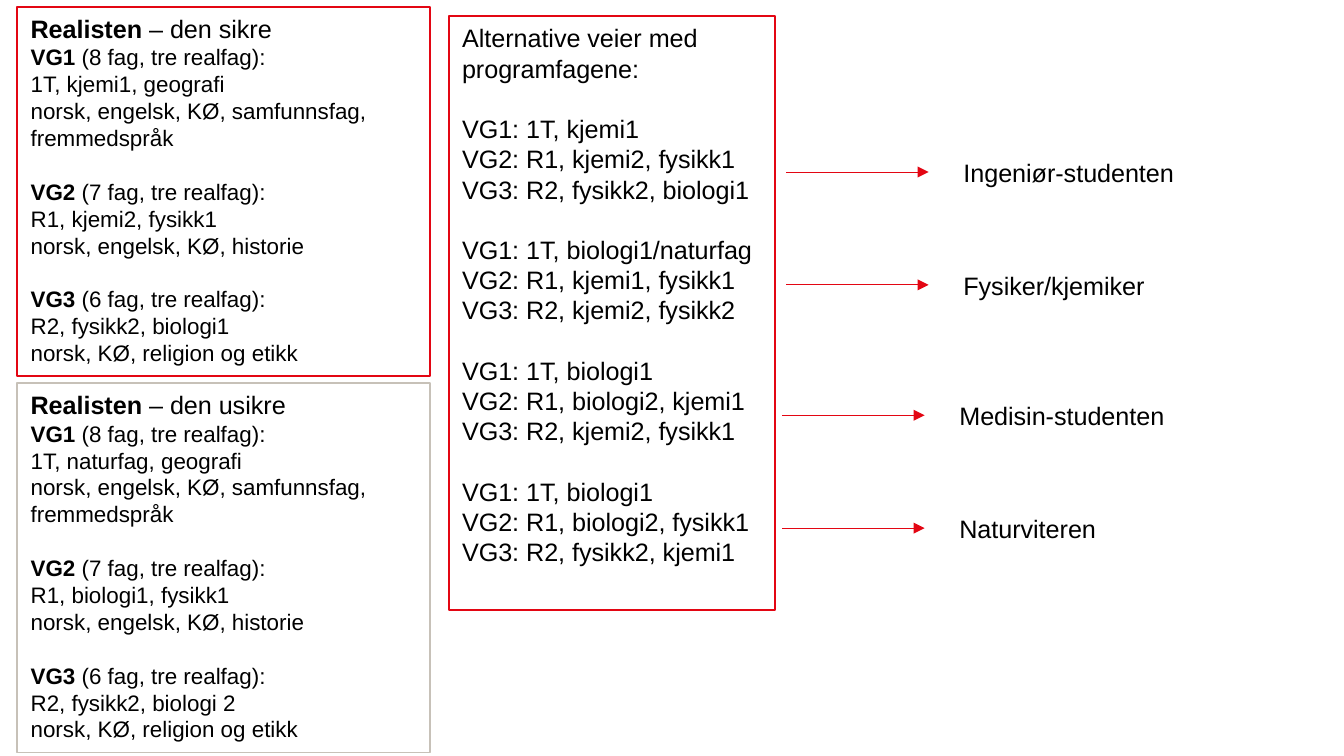
from pptx import Presentation
from pptx.dml.color import RGBColor
from pptx.enum.shapes import MSO_CONNECTOR, MSO_SHAPE
from pptx.enum.text import MSO_ANCHOR, PP_ALIGN
from pptx.oxml.ns import qn
from pptx.util import Inches, Pt
from lxml.etree import SubElement

RED = RGBColor(0xE3, 0x06, 0x13)
BEIGE = RGBColor(0xC7, 0xC1, 0xB8)
WHITE = RGBColor(0xFF, 0xFF, 0xFF)
BLACK = RGBColor(0x00, 0x00, 0x00)
LARGE, SMALL = 13.5, 12
LINE_HEIGHT = 1.2

# Widescreen slide, 16:9
presentation = Presentation()
presentation.slide_width = Inches(10)
presentation.slide_height = Inches(10) * 9 // 16
slide = presentation.slides.add_slide(presentation.slide_layouts[6])


def add_box(left, top, width, height, line_color):
    shape = slide.shapes.add_shape(
        MSO_SHAPE.RECTANGLE, Inches(left), Inches(top), Inches(width), Inches(height))
    shape.shadow.inherit = False
    shape.fill.solid()
    shape.fill.fore_color.rgb = WHITE
    shape.line.color.rgb = line_color
    shape.line.width = Pt(1)
    shape.text_frame.word_wrap = True
    shape.text_frame.vertical_anchor = MSO_ANCHOR.TOP
    return shape.text_frame


def add_line(text_frame, bold_text, text, size, gap=False):
    """Write one paragraph; gap leaves one line of space above it."""
    paragraph = text_frame.paragraphs[0]
    if paragraph.runs:
        paragraph = text_frame.add_paragraph()
    paragraph.alignment = PP_ALIGN.LEFT
    if gap:
        paragraph.space_before = Pt(round(size * LINE_HEIGHT, 1))
    for content, bold in ((bold_text, True), (text, False)):
        if content:
            run = paragraph.add_run()
            run.text = content
            run.font.name = "Arial"
            run.font.size = Pt(size)
            run.font.bold = bold
            run.font.color.rgb = BLACK


# Subject plans on the left: heading ending, outline, science subjects per year
plans = [
    ("sikre", RED, ["1T, kjemi1, geografi", "R1, kjemi2, fysikk1", "R2, fysikk2, biologi1"]),
    ("usikre", BEIGE, ["1T, naturfag, geografi", "R1, biologi1, fysikk1", "R2, fysikk2, biologi 2"]),
]
years = [
    ("VG1", 8, "norsk, engelsk, KØ, samfunnsfag, fremmedspråk"),
    ("VG2", 7, "norsk, engelsk, KØ, historie"),
    ("VG3", 6, "norsk, KØ, religion og etikk"),
]
for row, (kind, color, sciences) in enumerate(plans):
    text_frame = add_box(0.13, 0.05 + row * 2.8, 3.07, 2.75, color)
    add_line(text_frame, "Realisten", f" – den {kind}", LARGE)
    for (year, count, common), science in zip(years, sciences):
        add_line(text_frame, year, f" ({count} fag, tre realfag):", SMALL, gap=year != "VG1")
        add_line(text_frame, "", science, SMALL)
        add_line(text_frame, "", common, SMALL)

# Alternative routes in the middle
routes = [
    ("1T, kjemi1", "R1, kjemi2, fysikk1", "R2, fysikk2, biologi1"),
    ("1T, biologi1/naturfag", "R1, kjemi1, fysikk1", "R2, kjemi2, fysikk2"),
    ("1T, biologi1", "R1, biologi2, kjemi1", "R2, kjemi2, fysikk1"),
    ("1T, biologi1", "R1, biologi2, fysikk1", "R2, fysikk2, kjemi1"),
]
text_frame = add_box(3.34, 0.12, 2.43, 4.42, RED)
add_line(text_frame, "", "Alternative veier med programfagene:", LARGE)
for route in routes:
    for year, subjects in enumerate(route, start=1):
        add_line(text_frame, "", f"VG{year}: {subjects}", LARGE, gap=year == 1)

# Arrows to the student each route leads to: name, arrow start, height, label width
students = [
    ("Ingeniør-studenten", 5.85, 1.28, 1.79),
    ("Fysiker/kjemiker", 5.85, 2.12, 1.57),
    ("Medisin-studenten", 5.82, 3.09, 1.75),
    ("Naturviteren", 5.82, 3.93, 1.23),
]
for name, left, middle, width in students:
    arrow = slide.shapes.add_connector(
        MSO_CONNECTOR.STRAIGHT, Inches(left), Inches(middle), Inches(left + 1.06), Inches(middle))
    arrow.line.color.rgb = RED
    arrow.line.width = Pt(0.5)
    SubElement(arrow.line._get_or_add_ln(), qn("a:tailEnd"), type="triangle")
    SubElement(arrow._element.spPr, qn("a:effectLst"))

    label = slide.shapes.add_textbox(
        Inches(left + 1.22), Inches(middle - 0.16), Inches(width), Inches(0.33))
    label.text_frame.word_wrap = False
    add_line(label.text_frame, "", name, LARGE)

presentation.save("out.pptx")
